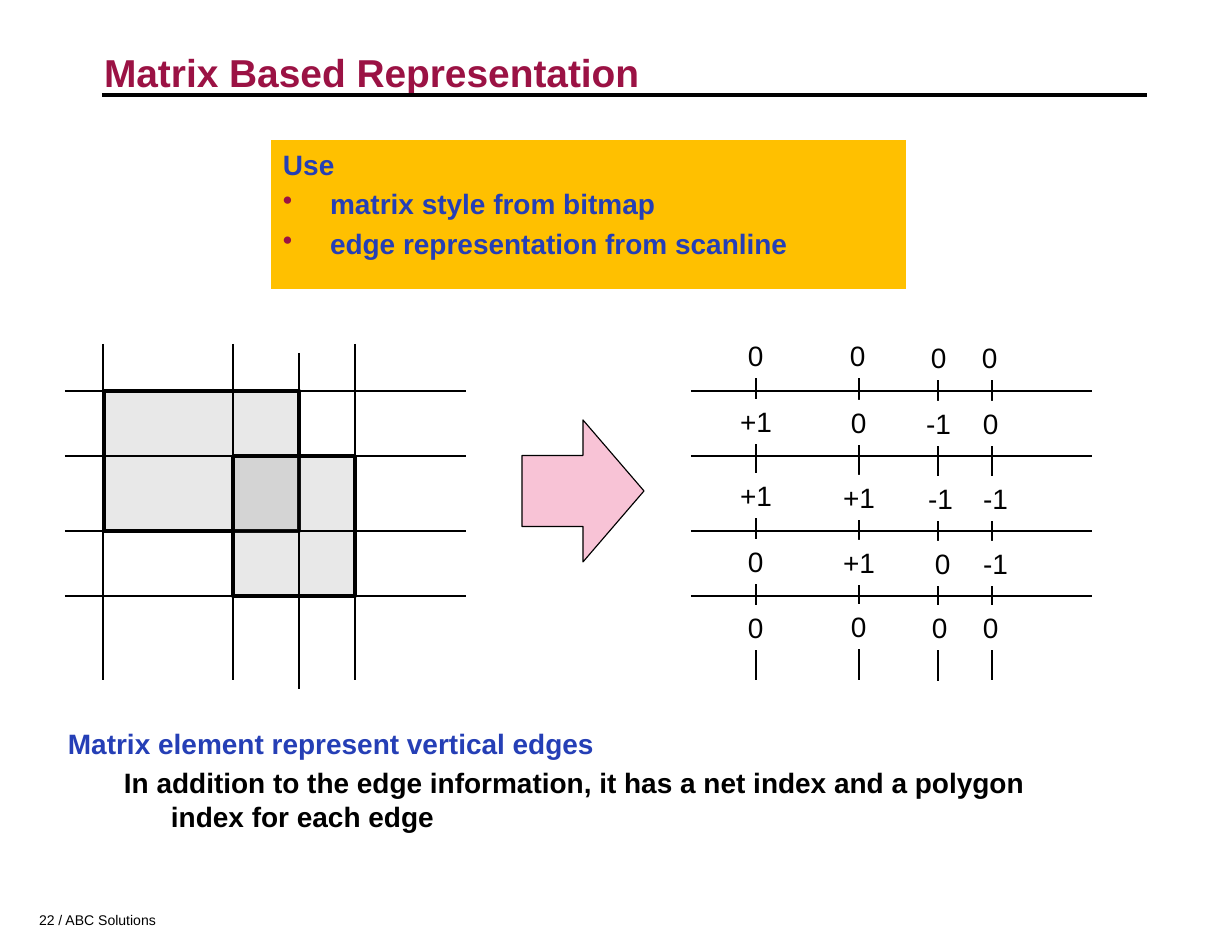
from lxml import etree
from pptx import Presentation
from pptx.dml.color import RGBColor
from pptx.enum.shapes import MSO_CONNECTOR, MSO_SHAPE
from pptx.enum.text import MSO_ANCHOR, MSO_AUTO_SIZE, PP_ALIGN
from pptx.oxml.ns import qn
from pptx.util import Pt

PX = 914400 / 112
BLACK, WHITE, BLUE, CRIMSON = "000000", "FFFFFF", "253FB6", "9B1244"
INDENT = 47

presentation = Presentation()
presentation.slide_width = round(1232 * PX)
presentation.slide_height = round(952 * PX)
slide = presentation.slides.add_slide(presentation.slide_layouts[5])
shapes = slide.shapes


def emu(*lengths):
    return [round(length * PX) for length in lengths]


def color(value):
    return RGBColor.from_string(value)


# Title
title = shapes.title
title.left, title.top, title.width, title.height = emu(104, 37, 1042, 95)
frame = title.text_frame
frame.text = "Matrix Based Representation"
frame.auto_size = MSO_AUTO_SIZE.NONE
frame.vertical_anchor = MSO_ANCHOR.TOP
frame.margin_left = frame.margin_right = 0
frame.margin_top = frame.margin_bottom = round(7 * PX)
paragraph = frame.paragraphs[0]
paragraph.alignment = PP_ALIGN.LEFT
paragraph.line_spacing = 1.1
font = paragraph.runs[0].font
font.name, font.size, font.bold = "Arial", Pt(25), True
font.color.rgb = color(CRIMSON)

# Overlapping polygons
for box in [(104, 391, 195, 140), (233, 456, 122, 140)]:
    polygon = shapes.add_shape(MSO_SHAPE.RECTANGLE, *emu(*box))
    polygon.shadow.inherit = False
    polygon.fill.solid()
    polygon.fill.fore_color.rgb = color("777777")
    fill_color = polygon.fill._xPr.find(qn("a:solidFill"))[0]
    etree.SubElement(fill_color, qn("a:alpha")).set("val", "17000")
    polygon.line.color.rgb = color(BLACK)
    polygon.line.width = Pt(2.25)

# Title rule and the two scanline grids
lines = [(102, 95, 1147, 95, 2.5)]
for left in (65, 691):
    lines += [(left, y, left + 401, y, 0.75) for y in (391, 456, 531, 596)]
for x, top in [(103, 344), (233, 344), (299, 353), (355, 344),
               (756, 344), (859, 344), (938, 345), (992, 344)]:
    lines.append((x, top, x, top + 336, 0.75))
for *ends, weight in lines:
    line = shapes.add_connector(MSO_CONNECTOR.STRAIGHT, *emu(*ends))
    line.line.color.rgb = color(BLACK)
    line.line.width = Pt(weight)
    etree.SubElement(line._element.spPr, qn("a:effectLst"))

# Matrix values: text, left and top of each label, column by column
label_widths = {"0": 38, "+1": 55, "-1": 48}
columns = [
    (["0", "+1", "+1", "0", "0"], [737, 729, 729, 737, 737], [333, 399, 473, 539, 605]),
    (["0", "0", "+1", "+1", "0"], [839, 840, 832, 832, 840], [333, 400, 475, 540, 604]),
    (["0", "-1", "-1", "0", "0"], [920, 915, 917, 924, 921], [335, 401, 476, 541, 605]),
    (["0", "0", "-1", "-1", "0"], [971, 972, 972, 972, 972], [335, 401, 476, 541, 605]),
]
for column in columns:
    for value, left, top in zip(*column):
        label = shapes.add_textbox(*emu(left, top, label_widths[value], 45))
        label.fill.solid()
        label.fill.fore_color.rgb = color(WHITE)
        label.text_frame.word_wrap = False
        label.text_frame.text = value
        font = label.text_frame.paragraphs[0].runs[0].font
        font.name, font.size = "Arial", Pt(18)
        font.color.rgb = color(BLACK)

# Arrow from polygons to matrix
arrow = shapes.add_shape(MSO_SHAPE.RIGHT_ARROW, *emu(522, 420, 122, 142))
arrow.shadow.inherit = False
arrow.fill.solid()
arrow.fill.fore_color.rgb = color("F8C3D6")
arrow.line.color.rgb = color(BLACK)
arrow.line.width = Pt(0.75)

# Text blocks: box, fill, paragraphs as (text, level, colour, bullet)
blocks = [
    ((271, 140, 635, 149), "FFC000", [
        ("Use", 0, BLUE, False),
        ("matrix style from bitmap", 0, BLUE, True),
        ("edge representation from scanline", 0, BLUE, True)]),
    ((56, 719, 1044, 169), None, [
        ("Matrix element represent vertical edges", 0, BLUE, False),
        ("In addition to the edge information, it has a net index and a polygon "
         "index for each edge", 1, BLACK, False)]),
]
for box, fill, paragraphs in blocks:
    block = shapes.add_textbox(*emu(*box))
    if fill:
        block.fill.solid()
        block.fill.fore_color.rgb = color(fill)
    frame = block.text_frame
    frame.word_wrap = True
    frame.margin_left = frame.margin_right = round(12 * PX)
    frame.margin_top = frame.margin_bottom = round(7 * PX)
    for index, (text, level, text_color, bullet) in enumerate(paragraphs):
        paragraph = frame.add_paragraph() if index else frame.paragraphs[0]
        paragraph.text = text
        paragraph.level = level
        properties = paragraph._p.get_or_add_pPr()
        properties.set("marL", str(round((INDENT + 56 * level) * PX)))
        properties.set("indent", str(round(-INDENT * PX)))
        if bullet:
            bullet_color = etree.SubElement(properties, qn("a:buClr"))
            etree.SubElement(bullet_color, qn("a:srgbClr")).set("val", CRIMSON)
            etree.SubElement(properties, qn("a:buChar")).set("char", "•")
        if index:
            paragraph.space_before = Pt(4)
        font = paragraph.runs[0].font
        font.name, font.size, font.bold = "Arial", Pt(18), True
        font.color.rgb = color(text_color)

# Footer
footer = shapes.add_textbox(*emu(28, 906, 146, 28))
footer.text_frame.word_wrap = False
footer.text_frame.text = "22 / ABC Solutions"
font = footer.text_frame.paragraphs[0].runs[0].font
font.name, font.size = "Arial", Pt(9)
font.color.rgb = color(BLACK)

presentation.save("out.pptx")
